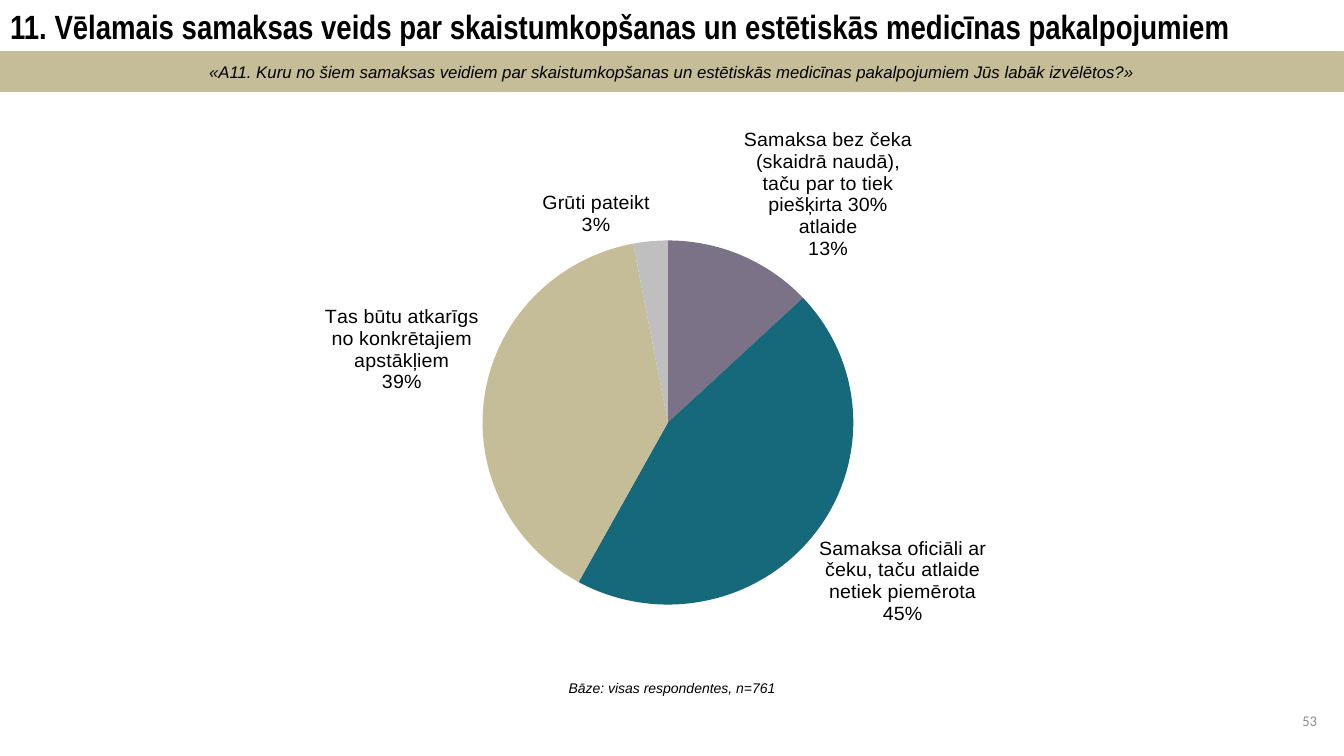
from lxml import etree
from pptx import Presentation, util as u
from pptx.chart.data import CategoryChartData
from pptx.dml.color import RGBColor
from pptx.enum import chart as charts, shapes, text
from pptx.oxml.ns import qn

EMU_PER_PX = 914400 / 100.8
COLORS = {
    "black": "000000",
    "sand": "C4BD97",
    "mauve": "7C7287",
    "teal": "16697A",
    "silver": "BFBFBF",
    "gray": "8C8C8C",
}
ANSWERS = [
    ("Samaksa bez čeka (skaidrā naudā), taču par to tiek piešķirta 30% atlaide", 13, "mauve"),
    ("Samaksa oficiāli ar čeku, taču atlaide netiek piemērota", 45, "teal"),
    ("Tas būtu atkarīgs no konkrētajiem apstākļiem", 39, "sand"),
    ("Grūti pateikt", 3, "silver"),
]
PLOT_LAYOUT = {"x": 0.29, "y": 0.22, "w": 0.41, "h": 0.72}


def px(length):
    return u.Emu(round(length * EMU_PER_PX))


def color(name):
    return RGBColor.from_string(COLORS[name])


def write(shape, words, size, font="Arial", align=text.PP_ALIGN.CENTER,
          ink="black", bold=False, italic=False):
    frame = shape.text_frame
    frame.word_wrap = True
    frame.auto_size = text.MSO_AUTO_SIZE.NONE
    frame.vertical_anchor = text.MSO_ANCHOR.MIDDLE
    paragraph = frame.paragraphs[0]
    paragraph.alignment = align
    run = paragraph.add_run()
    run.text = words
    run.font.name = font
    run.font.size = u.Pt(size)
    run.font.bold = bold
    run.font.italic = italic
    run.font.color.rgb = color(ink)


def add_title(slide, words):
    title = slide.shapes.title
    title.left, title.top, title.width, title.height = px(0), px(0), px(1344), px(52)
    write(title, words, 24, "Arial Narrow", text.PP_ALIGN.LEFT, bold=True)


def add_question_band(slide, words):
    band = slide.shapes.add_shape(
        shapes.MSO_SHAPE.RECTANGLE, px(0), px(52), px(1344), px(40))
    band.shadow.inherit = False
    band.fill.solid()
    band.fill.fore_color.rgb = color("sand")
    band.line.color.rgb = color("sand")
    band.line.width = u.Pt(0.75)
    write(band, words, 12, italic=True)


def add_label(slide, left, top, width, height, words, size, **style):
    box = slide.shapes.add_textbox(px(left), px(top), px(width), px(height))
    write(box, words, size, **style)


def set_plot_layout(chart):
    """Fix the inner plot area as fractions of the chart frame."""
    plot_area = chart.plots[0]._element.getparent()
    for old in plot_area.findall(qn("c:layout")):
        plot_area.remove(old)
    layout = etree.Element(qn("c:layout"))
    plot_area.insert(0, layout)
    manual = etree.SubElement(layout, qn("c:manualLayout"))
    settings = {"layoutTarget": "inner", "xMode": "edge", "yMode": "edge", **PLOT_LAYOUT}
    for tag, value in settings.items():
        etree.SubElement(manual, qn(f"c:{tag}")).set("val", str(value))


def add_answer_pie(slide):
    data = CategoryChartData()
    data.categories = [answer for answer, _, _ in ANSWERS]
    data.add_series("Series 1", [share for _, share, _ in ANSWERS])
    chart = slide.shapes.add_chart(
        charts.XL_CHART_TYPE.PIE, px(220), px(120), px(905), px(515), data).chart
    chart.has_legend = False
    chart.has_title = False
    chart.font.name = "Arial"
    chart.font.size = u.Pt(10)
    chart.font.color.rgb = color("black")
    set_plot_layout(chart)

    plot = chart.plots[0]
    plot.vary_by_categories = True
    for index, (_, _, ink) in enumerate(ANSWERS):
        fill = plot.series[0].points[index].format.fill
        fill.solid()
        fill.fore_color.rgb = color(ink)

    labels = plot.series[0].data_labels
    labels.show_value = False
    labels.show_percentage = True
    labels.show_category_name = True
    labels.number_format = "0%"
    labels.number_format_is_linked = False
    labels.position = charts.XL_LABEL_POSITION.OUTSIDE_END
    labels.font.name = "Arial"
    labels.font.size = u.Pt(14)
    labels.font.color.rgb = color("black")
    labels_xml = plot.series[0]._element.find(qn("c:dLbls"))
    separator = etree.Element(qn("c:separator"))
    separator.text = "\n"
    labels_xml.find(qn("c:showBubbleSize")).addnext(separator)


def main():
    presentation = Presentation()
    presentation.slide_width, presentation.slide_height = px(1344), px(756)
    slide = presentation.slides.add_slide(presentation.slide_layouts[5])
    add_title(slide, "11. Vēlamais samaksas veids par skaistumkopšanas un "
                     "estētiskās medicīnas pakalpojumiem")
    add_question_band(slide, "«A11. Kuru no šiem samaksas veidiem par skaistumkopšanas un "
                             "estētiskās medicīnas pakalpojumiem Jūs labāk izvēlētos?»")
    add_answer_pie(slide)
    add_label(slide, 168, 664, 1008, 47, "Bāze: visas respondentes, n=761", 10, italic=True)
    add_label(slide, 1184, 701, 143, 40, "53", 10.5, font="Calibri",
              align=text.PP_ALIGN.RIGHT, ink="gray")
    presentation.save("out.pptx")


if __name__ == "__main__":
    main()
